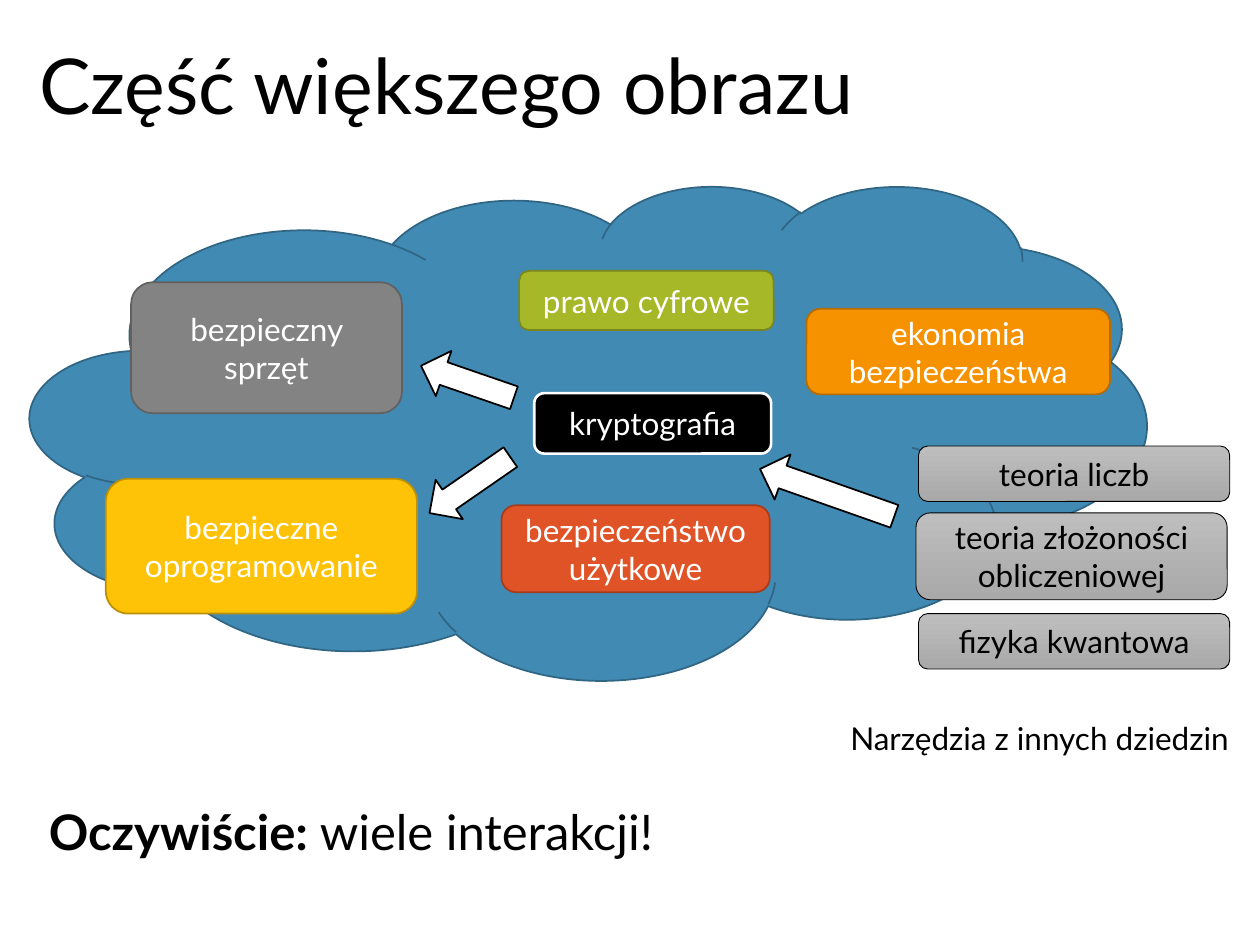
from pptx import Presentation
from pptx.dml.color import RGBColor
from pptx.enum.shapes import MSO_SHAPE as Shape
from pptx.enum.text import MSO_ANCHOR as Anchor, MSO_AUTO_SIZE as AutoSize, PP_ALIGN as Align
from pptx.util import Inches, Pt

FONT = "Lato"
COLORS = {
    "black": "000000", "white": "FFFFFF",
    "cloud": "418AB3", "cloud_line": "306684",
    "green": "A6B727", "green_line": "7B871D",
    "yellow": "FEC306", "yellow_line": "BC9004",
    "red": "DF5327", "red_line": "A53D1D",
    "orange": "F69200", "orange_line": "B66C00",
    "gray": "838383", "gray_line": "616161",
    "tool_top": "BEBEBE", "tool_bottom": "A9A9A9",
}
TOPICS = [
    ("prawo cyfrowe", "green", "green_line", 1, (3.88, 0.68, 2.02, 0.47)),
    ("bezpieczne oprogramowanie", "yellow", "yellow_line", 1, (0.6, 2.33, 2.47, 1.07)),
    ("bezpieczeństwo użytkowe", "red", "red_line", 1, (3.74, 2.54, 2.13, 0.69)),
    ("kryptografia", "black", "white", 1.5, (4, 1.65, 1.88, 0.48)),
    ("ekonomia bezpieczeństwa", "orange", "orange_line", 1, (6.16, 0.98, 2.41, 0.68)),
    ("bezpieczny sprzęt", "gray", "gray_line", 1, (0.8, 0.77, 2.15, 1.04)),
]
ARROWS = [(3.08, 1.37, 0.78, 19), (3.1, 2.19, 0.78, 325.3), (5.76, 2.25, 1.13, 19.4)]
TOOLS = [
    ("teoria liczb", 0.02, 0, 0.44),
    ("teoria złożoności obliczeniowej", 0, 0.53, 0.69),
    ("fizyka kwantowa", 0.02, 1.33, 0.44),
]


def color(name):
    """Return the named palette colour."""
    return RGBColor.from_string(COLORS[name])


def add_run(paragraph, text, size, color_name="black", bold=False):
    """Append one formatted run."""
    run = paragraph.add_run()
    run.text = text
    run.font.name = FONT
    run.font.size = Pt(size)
    run.font.bold = bold
    run.font.color.rgb = color(color_name)


def add_figure(slide, kind, box, fill, line, line_width=1):
    """Add a preset shape; a pair of fill names gives a vertical gradient."""
    shape = slide.shapes.add_shape(kind, *map(Inches, box))
    shape.shadow.inherit = False
    if isinstance(fill, tuple):
        shape.fill.gradient()
        shape.fill.gradient_angle = 270
        for stop, name in zip(shape.fill.gradient_stops, fill):
            stop.color.rgb = color(name)
    else:
        shape.fill.solid()
        shape.fill.fore_color.rgb = color(fill)
    shape.line.color.rgb = color(line)
    shape.line.width = Pt(line_width)
    return shape


def add_label_box(slide, text, box, fill, line, line_width, text_color):
    """Add a rounded rectangle with a centred label."""
    shape = add_figure(slide, Shape.ROUNDED_RECTANGLE, box, fill, line, line_width)
    frame = shape.text_frame
    frame.word_wrap = True
    frame.vertical_anchor = Anchor.MIDDLE
    paragraph = frame.paragraphs[0]
    paragraph.alignment = Align.CENTER
    add_run(paragraph, text, 18, text_color)


def add_title(slide, box, text):
    """Place and format the title placeholder."""
    title = slide.shapes.title
    title.left, title.top, title.width, title.height = map(Inches, box)
    frame = title.text_frame
    frame.vertical_anchor = Anchor.MIDDLE
    paragraph = frame.paragraphs[0]
    paragraph.alignment = Align.LEFT
    paragraph.line_spacing = 0.9
    add_run(paragraph, text, 44)


def add_topic_cloud(slide, box):
    """Draw the cloud with its topics and arrows."""
    left, top = box[:2]
    add_figure(slide, Shape.CLOUD, box, "cloud", "cloud_line")
    for text, fill, line, line_width, (x, y, width, height) in TOPICS:
        place = (left + x, top + y, width, height)
        add_label_box(slide, text, place, fill, line, line_width, "white")
    for x, y, width, rotation in ARROWS:
        place = (left + x, top + y, width, 0.38)
        add_figure(slide, Shape.LEFT_ARROW, place, "white", "black").rotation = rotation


def add_tools(slide, box):
    """Stack the boxes for tools from other fields."""
    left, top, width = box[:3]
    for text, x, y, height in TOOLS:
        place = (left + x, top + y, width - 0.02, height)
        add_label_box(slide, text, place, ("tool_top", "tool_bottom"), "black", 0.5, "black")


def add_note(slide, box, size, parts):
    """Add a one-line text box from (text, bold) parts."""
    frame = slide.shapes.add_textbox(*map(Inches, box)).text_frame
    frame.word_wrap = False
    frame.auto_size = AutoSize.SHAPE_TO_FIT_TEXT
    for text, bold in parts:
        add_run(frame.paragraphs[0], text, size, bold=bold)


def main():
    """Build and save the slide."""
    presentation = Presentation()
    presentation.slide_width = Inches(10)
    presentation.slide_height = Inches(7.5)
    slide = presentation.slides.add_slide(presentation.slide_layouts[5])
    add_title(slide, (0.21, 0.32, 8.62, 0.78), "Część większego obrazu")
    add_topic_cloud(slide, (0.24, 1.47, 8.86, 3.92))
    add_tools(slide, (7.27, 3.54, 2.49, 1.77))
    add_note(slide, (6.65, 5.66, 3.25, 0.4), 18, [("Narzędzia z innych dziedzin", False)])
    add_note(slide, (0.29, 6.31, 5.07, 0.57), 28,
             [("Oczywiście: ", True), ("wiele interakcji!", False)])
    presentation.save("out.pptx")


if __name__ == "__main__":
    main()
